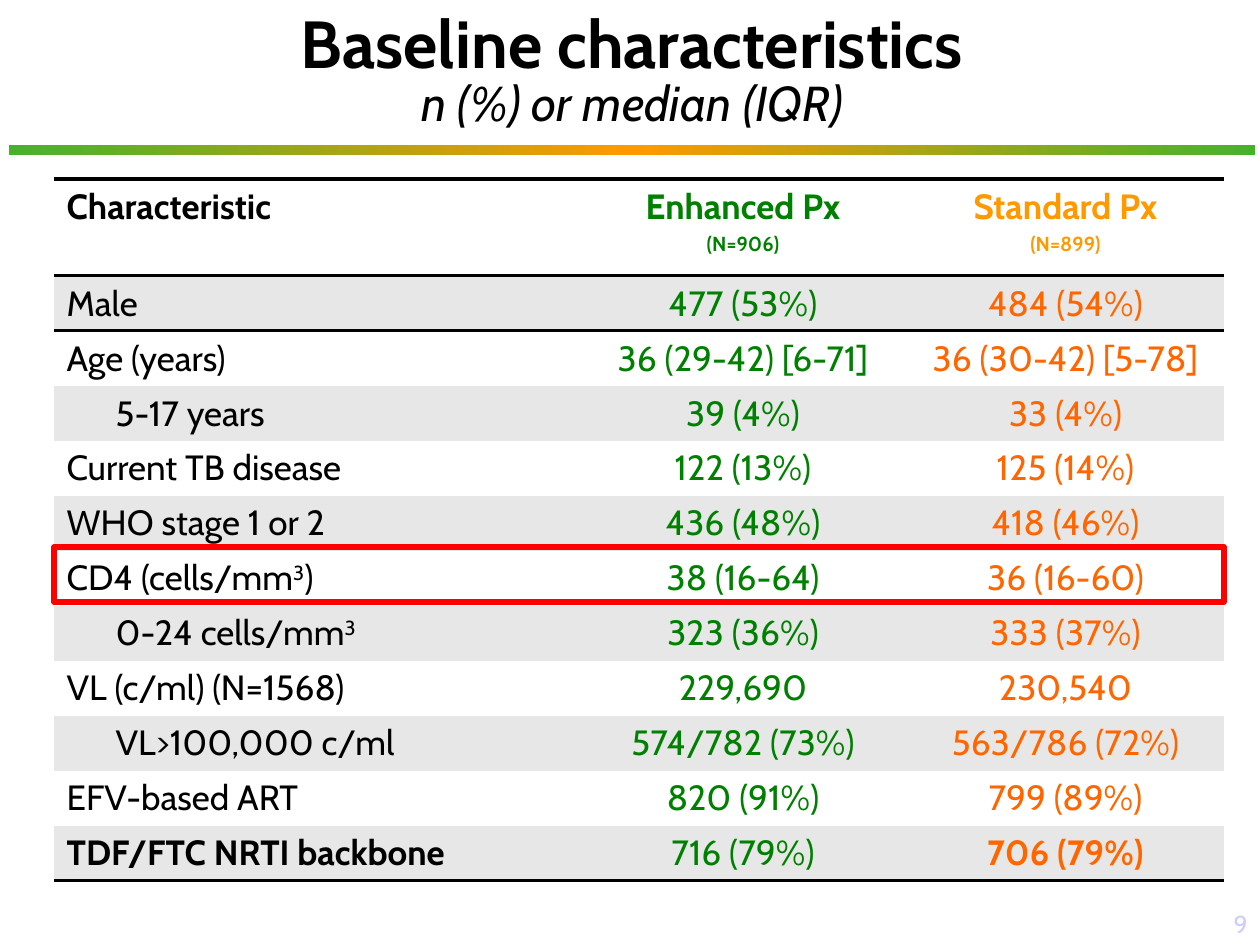
from copy import deepcopy
from dataclasses import dataclass

from lxml import etree
from pptx import Presentation
from pptx.dml.color import RGBColor
from pptx.enum.shapes import MSO_SHAPE
from pptx.enum.text import MSO_ANCHOR, PP_ALIGN
from pptx.oxml.ns import qn
from pptx.util import Emu, Pt

RECT = MSO_SHAPE.RECTANGLE
MIDDLE, BOTTOM = MSO_ANCHOR.MIDDLE, MSO_ANCHOR.BOTTOM
LEFT, CENTER, RIGHT = PP_ALIGN.LEFT, PP_ALIGN.CENTER, PP_ALIGN.RIGHT
NO_GRID = "{2D5ABB26-0587-4C30-8999-92F81FD0307C}"


@dataclass(frozen=True)
class Theme:
    """Colours, font and type sizes of the slide."""
    font: str = "Cabin"
    ink: str = "000000"
    paper: str = "FFFFFF"
    band: str = "E7E7E7"
    green: str = "008000"
    amber: str = "FF9900"
    orange: str = "FF6600"
    leaf: str = "46B22C"
    red: str = "FF0000"
    pale: str = "CCCCFF"
    title: int = 38
    sub: int = 28
    body: int = 20
    small: int = 14


def px(n):
    """Turn pixels into EMU."""
    return Emu(round(n * 914400 / 126))


class Deck:
    """Holds the style and the current slide."""

    def __init__(self, theme):
        """Start a one-slide deck."""
        self.theme = theme
        self.prs = Presentation()
        self.prs.slide_width, self.prs.slide_height = px(1260), px(945)
        self.slide = self.prs.slides.add_slide(self.prs.slide_layouts[6])

    def style(self, run, size, color, bold=False, italic=False):
        """Format one run."""
        font = run.font
        font.name, font.size = self.theme.font, Pt(size)
        font.bold, font.italic = bold, italic
        font.color.rgb = RGBColor.from_string(color)

    def rect(self, box):
        """Add a plain rectangle."""
        shape = self.slide.shapes.add_shape(RECT, *map(px, box))
        shape.shadow.inherit = False
        return shape

    def bar(self, box, colors):
        """Add a rectangle with an even gradient and no line."""
        shape = self.rect(box)
        shape.line.fill.background()
        fill = shape.fill
        fill.gradient()
        fill.gradient_angle = 0
        stops = shape._element.spPr.find(".//" + qn("a:gsLst"))
        for _ in colors[2:]:
            stops.append(deepcopy(stops[0]))
        for i, (stop, color) in enumerate(zip(fill.gradient_stops, colors)):
            stop.color.rgb = RGBColor.from_string(color)
            stop.position = i / (len(colors) - 1)

    def frame(self, box, color, width):
        """Add an outline without fill."""
        shape = self.rect(box)
        shape.fill.background()
        shape.line.color.rgb = RGBColor.from_string(color)
        shape.line.width = Pt(width)

    def text(self, box, words, align, anchor, looks, gap=None):
        """Add a text box with one look for each line."""
        body = self.slide.shapes.add_textbox(*map(px, box)).text_frame
        body.word_wrap = True
        body.vertical_anchor = anchor
        body.text = words
        para = body.paragraphs[0]
        para.alignment, para.line_spacing = align, gap
        for run, look in zip(para.runs, looks):
            self.style(run, *look)

    def rule(self, cell, side):
        """Draw a border on one side of a cell."""
        line = etree.SubElement(cell._tc.get_or_add_tcPr(), qn("a:" + side), w=str(Pt(2)))
        fill = etree.SubElement(line, qn("a:solidFill"))
        etree.SubElement(fill, qn("a:srgbClr"), val=self.theme.ink)

    def cell(self, cell, words, color, align, back, bold, indent, sides):
        """Fill one cell; text between carets is raised."""
        for side in sides:
            self.rule(cell, side)
        cell.fill.solid()
        cell.fill.fore_color.rgb = RGBColor.from_string(back)
        first, *rest = words.split("^")
        para = cell.text_frame.paragraphs[0]
        para.text = first
        para.alignment = align
        if indent:
            para._p.get_or_add_pPr().set("marL", str(px(indent)))
        for part in filter(None, rest):
            para.add_run().text = part
        for i, run in enumerate(para.runs):
            self.style(run, self.theme.body, color, bold)
            if i % 2:
                run.font._element.set("baseline", "30000")

    def table(self, left, top, cols, rows, data, nested, strong):
        """Add a banded table ruled around its head and at its foot."""
        t = self.theme
        box = (left, top, sum(cols), sum(rows))
        holder = self.slide.shapes.add_table(len(rows), len(cols), *map(px, box))
        holder._element.find(".//" + qn("a:tableStyleId")).text = NO_GRID
        grid = holder.table
        for col, wide in zip(grid.columns, cols):
            col.width = px(wide)
        for row, high in zip(grid.rows, rows):
            row.height = px(high)
        last = len(data) - 1
        for r, line in enumerate(data):
            back = t.band if r % 2 else t.paper
            sides = {0: ("lnT", "lnB"), 1: ("lnT",), last: ("lnB",)}.get(r, ())
            hues = (t.ink, t.green, t.orange if r else t.amber)
            for c, words in enumerate(line):
                indent = 49 if c == 0 and r in nested else 0
                self.cell(grid.cell(r, c), words, hues[c], CENTER if c else LEFT,
                          back, (r, c) in strong, indent, sides)


def main():
    """Build and save the slide."""
    t = Theme()
    deck = Deck(t)
    deck.bar((9, 145, 1246, 10), (t.leaf, t.amber, t.leaf))
    deck.text((123, 31, 1018, 84), "Baseline characteristics\vn (%) or median (IQR)",
              CENTER, MIDDLE,
              ((t.title, t.ink, True), (t.sub, t.ink, False, True)), 0.85)
    data = (
        ("Characteristic", "Enhanced Px\v(N=906)", "Standard Px\v(N=899)"),
        ("Male", "477 (53%)", "484 (54%)"),
        ("Age (years)", "36 (29-42) [6-71]", "36 (30-42) [5-78]"),
        ("5-17 years", "39 (4%)", "33 (4%)"),
        ("Current TB disease", "122 (13%)", "125 (14%)"),
        ("WHO stage 1 or 2", "436 (48%)", "418 (46%)"),
        ("CD4 (cells/mm^3^)", "38 (16-64)", "36 (16-60)"),
        ("0-24 cells/mm^3^", "323 (36%)", "333 (37%)"),
        ("VL (c/ml) (N=1568)", "229,690", "230,540"),
        ("VL>100,000 c/ml", "574/782 (73%)", "563/786 (72%)"),
        ("EFV-based ART", "820 (91%)", "799 (89%)"),
        ("TDF/FTC NRTI backbone", "716 (79%)", "706 (79%)"),
    )
    strong = {(0, 0), (0, 1), (0, 2), (11, 0), (11, 2)}
    deck.table(54, 179, (525, 328, 317), (97,) + (55,) * 11, data, {3, 7, 9}, strong)
    deck.text((1134, 882, 126, 63), "9", RIGHT, BOTTOM, ((t.small, t.pale),))
    deck.frame((54, 547, 1170, 55), t.red, 3)
    deck.prs.save("out.pptx")


if __name__ == "__main__":
    main()
